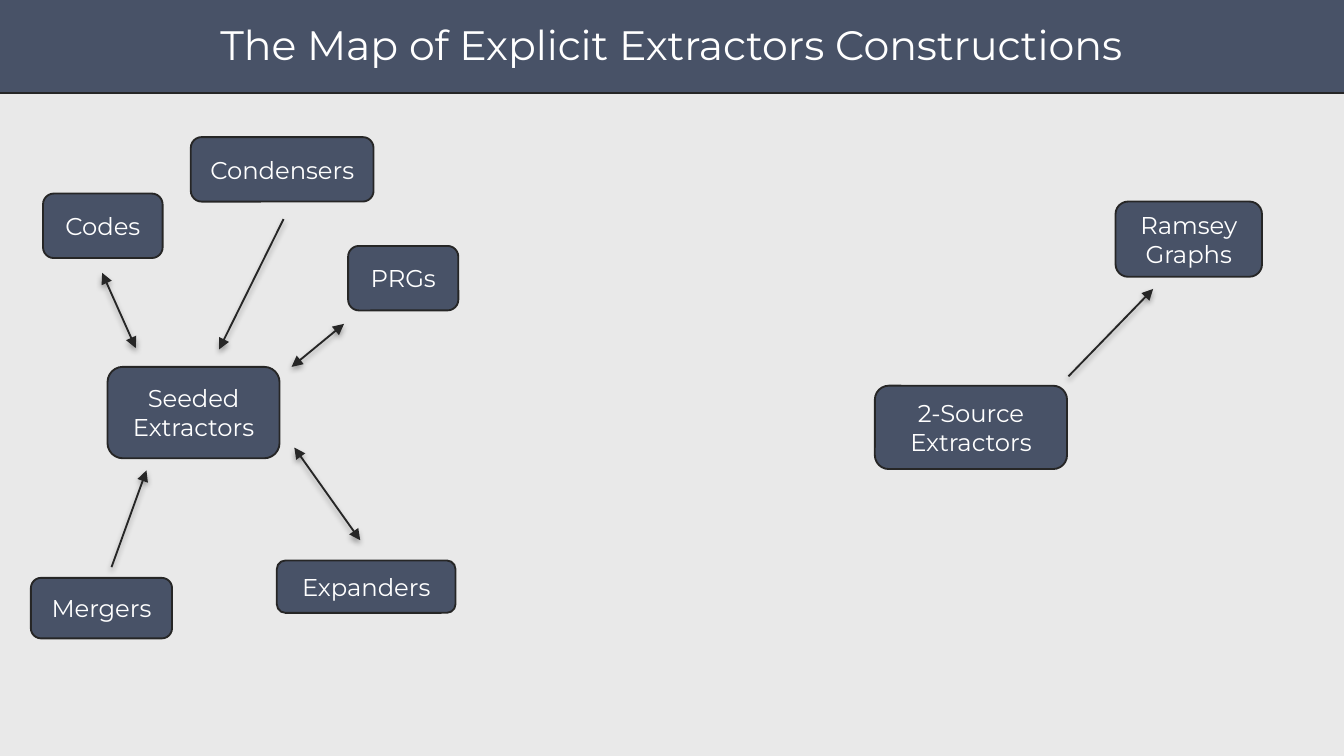
from lxml import etree
from pptx import Presentation
from pptx.dml.color import RGBColor
from pptx.enum import shapes, text
from pptx.oxml import ns
from pptx.util import Inches, Pt

SLATE = RGBColor(0x48, 0x52, 0x67)
INK = RGBColor(0x26, 0x26, 0x26)
PAPER = RGBColor(0xE9, 0xE9, 0xE9)
WHITE = RGBColor(0xFF, 0xFF, 0xFF)
FONT = "Montserrat"

NODES = [
    ("2-Source Extractors", 6.51, 2.87, 1.43, 0.62),
    ("Seeded Extractors", 0.8, 2.73, 1.28, 0.68),
    ("Mergers", 0.23, 4.3, 1.05, 0.45),
    ("Condensers", 1.42, 1.02, 1.36, 0.48),
    ("Expanders", 2.06, 4.17, 1.33, 0.39),
    ("Codes", 0.32, 1.44, 0.89, 0.48),
    ("PRGs", 2.59, 1.83, 0.82, 0.48),
    ("Ramsey Graphs", 8.3, 1.5, 1.09, 0.56),
]

# Start x, y, end x, y, and whether the arrow points both ways
ARROWS = [
    (0.76, 2.03, 1.01, 2.59, True),    # Codes - Seeded
    (0.83, 4.22, 1.09, 3.5, False),    # Mergers - Seeded
    (2.68, 4.02, 2.19, 3.33, True),    # Expanders - Seeded
    (2.11, 1.63, 1.63, 2.6, False),    # Condensers - Seeded
    (2.56, 2.41, 2.17, 2.73, True),    # PRGs - Seeded
    (7.95, 2.8, 8.58, 2.15, False),    # 2-Source - Ramsey
]


def write(shape, words, size):
    frame = shape.text_frame
    frame.text = words
    frame.word_wrap = True
    frame.vertical_anchor = text.MSO_ANCHOR.MIDDLE
    para = frame.paragraphs[0]
    para.alignment = text.PP_ALIGN.CENTER
    font = para.runs[0].font
    font.name = FONT
    font.size = Pt(size)
    font.color.rgb = WHITE


def stroke(shape):
    shape.line.color.rgb = INK
    shape.line.width = Pt(1)


def add_box(slide, kind, *area):
    box = slide.shapes.add_shape(kind, *map(Inches, area))
    box.shadow.inherit = False
    box.fill.solid()
    box.fill.fore_color.rgb = SLATE
    stroke(box)
    return box


def add_title(slide, words):
    add_box(slide, shapes.MSO_SHAPE.RECTANGLE, -0.25, -0.1, 10.42, 0.79)
    title = slide.shapes.add_textbox(*map(Inches, (0.42, 0.06, 9.15, 0.54)))
    write(title, words, 22)
    frame = title.text_frame
    frame.margin_left = frame.margin_right = 0
    frame.margin_top = frame.margin_bottom = 0


def add_node(slide, words, *area):
    box = add_box(slide, shapes.MSO_SHAPE.ROUNDED_RECTANGLE, *area)
    write(box, words, 13)


def child(parent, tag, **attrs):
    return etree.SubElement(parent, ns.qn(tag), attrs)


def add_shadow(arrow):
    effects = child(arrow._element.spPr, "a:effectLst")
    shadow = child(effects, "a:outerShdw", blurRad=str(Pt(3.1)),
                   dist=str(Pt(1.8)), dir="5400000", rotWithShape="0")
    color = child(shadow, "a:srgbClr", val="000000")
    child(color, "a:alpha", val="35000")


def add_arrow(slide, x1, y1, x2, y2, both):
    arrow = slide.shapes.add_connector(
        shapes.MSO_CONNECTOR.STRAIGHT, *map(Inches, (x1, y1, x2, y2)))
    stroke(arrow)
    line = arrow.line._get_or_add_ln()
    if both:
        child(line, "a:headEnd", type="triangle")
    child(line, "a:tailEnd", type="triangle")
    add_shadow(arrow)


def main():
    deck = Presentation()
    deck.slide_width = Inches(10)
    deck.slide_height = deck.slide_width * 9 // 16
    slide = deck.slides.add_slide(deck.slide_layouts[6])
    slide.background.fill.solid()
    slide.background.fill.fore_color.rgb = PAPER
    add_title(slide, "The Map of Explicit Extractors Constructions")
    for node in NODES:
        add_node(slide, *node)
    for arrow in ARROWS:
        add_arrow(slide, *arrow)
    deck.save("out.pptx")


if __name__ == "__main__":
    main()
